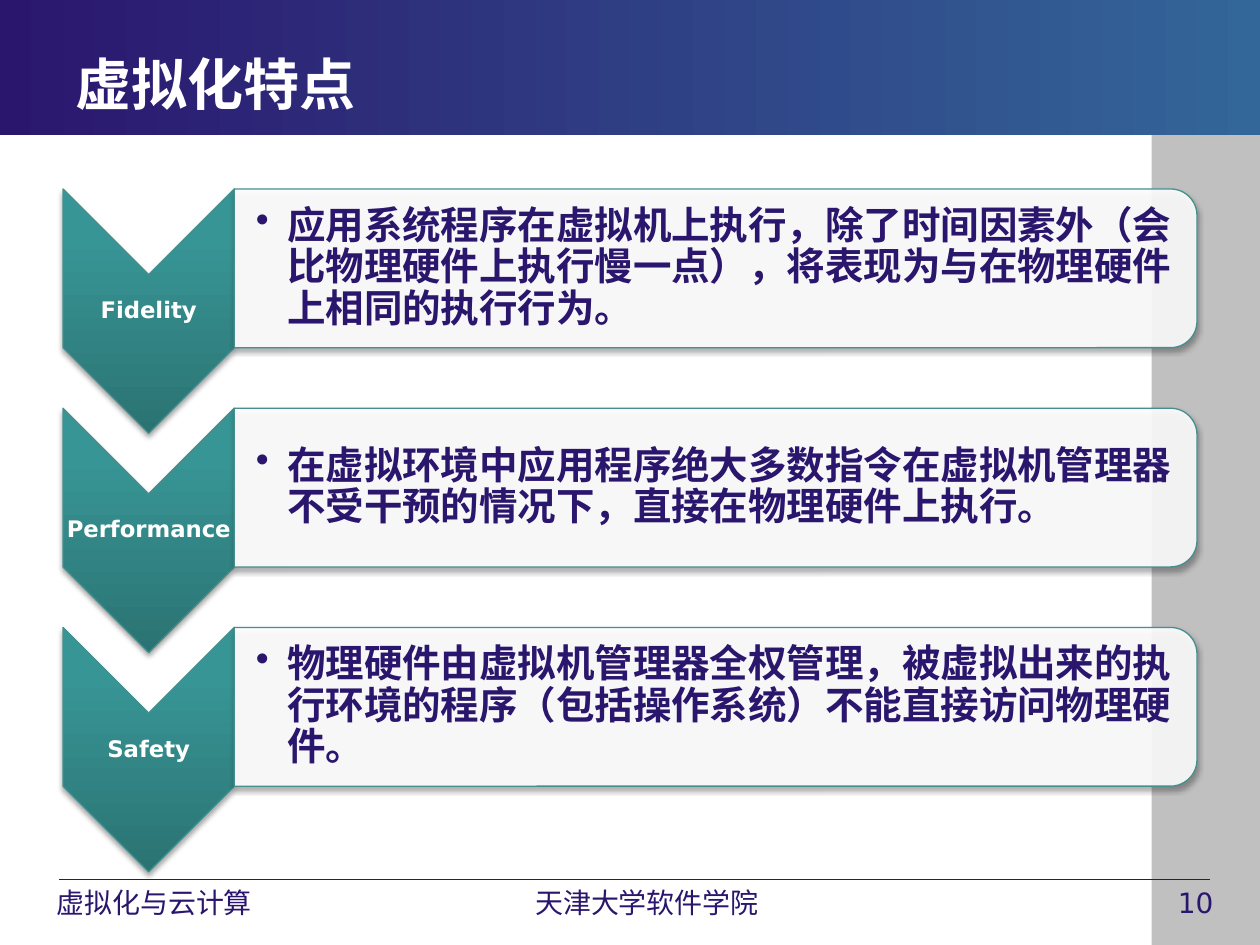
"""Build the slide on the three features of virtualization."""
from copy import deepcopy

from lxml import etree
from pptx import Presentation
from pptx.dml.color import RGBColor
from pptx.enum.shapes import MSO_CONNECTOR, MSO_SHAPE
from pptx.enum.text import MSO_ANCHOR as ANCHOR, PP_ALIGN as ALIGN
from pptx.oxml import parse_xml
from pptx.oxml.ns import nsdecls, qn
from pptx.util import Inches, Pt

NAVY = RGBColor(0x2B, 0x16, 0x6E)
BLUE = RGBColor(0x33, 0x66, 0x99)
GRAY = RGBColor(0xC0, 0xC0, 0xC0)
WHITE = RGBColor(0xFF, 0xFF, 0xFF)
TEAL_DARK = RGBColor(0x2B, 0x73, 0x73)
TEAL = RGBColor(0x38, 0x95, 0x95)
TEAL_LIGHT = RGBColor(0x37, 0x98, 0x98)
TEAL_LINE = RGBColor(0x45, 0x8F, 0x8F)
FONT = "DejaVu Sans"
SHADOW = (
    f'<a:outerShdw {nsdecls("a")} blurRad="{Pt(3.1)}" dist="{Pt(1.8)}" '
    'dir="5400000" rotWithShape="0"><a:srgbClr val="000000">'
    '<a:alpha val="35000"/></a:srgbClr></a:outerShdw>'
)
FEATURES = [
    ("Fidelity", "应用系统程序在虚拟机上执行，除了时间因素外（会比物理硬件上执行慢一点），将表现为与在物理硬件上相同的执行行为。"),
    ("Performance", "在虚拟环境中应用程序绝大多数指令在虚拟机管理器不受干预的情况下，直接在物理硬件上执行。"),
    ("Safety", "物理硬件由虚拟机管理器全权管理，被虚拟出来的执行环境的程序（包括操作系统）不能直接访问物理硬件。"),
]
FOOTERS = [
    (9.25, 0.71, "10", ALIGN.LEFT),
    (0.28, 1.94, "虚拟化与云计算 ", ALIGN.CENTER),
    (4.01, 2.25, "天津大学软件学院", ALIGN.CENTER),
]


def set_gradient(sp, angle, stops):
    sp.fill.gradient()
    sp.fill.gradient_angle = angle
    gs_lst = sp._element.spPr.find(".//" + qn("a:gsLst"))
    while len(gs_lst) < len(stops):
        gs_lst.append(deepcopy(gs_lst[0]))
    for stop, (position, color) in zip(sp.fill.gradient_stops, stops):
        stop.position = position
        stop.color.rgb = color


def write_text(sp, text, size, color, bold, align, anchor, insets=(0.1, 0.05, 0.1, 0.05)):
    tf = sp.text_frame
    tf.text = text
    tf.word_wrap = True
    tf.vertical_anchor = anchor
    tf.margin_left, tf.margin_top, tf.margin_right, tf.margin_bottom = map(Inches, insets)
    p = tf.paragraphs[0]
    p.alignment = align
    font = p.runs[0].font
    font.name, font.size, font.bold = FONT, Pt(size), bold
    font.color.rgb = color
    return p


prs = Presentation()
prs.slide_width, prs.slide_height = Inches(10), Inches(7.5)
s = prs.slides.add_slide(prs.slide_layouts[5])
shapes = s.shapes

side = shapes.add_shape(MSO_SHAPE.RECTANGLE, Inches(9.14), Inches(1.07), Inches(0.86), Inches(6.43))
side.fill.solid()
side.fill.fore_color.rgb = GRAY
rule = shapes.add_connector(MSO_CONNECTOR.STRAIGHT, Inches(0.47), Inches(6.98), Inches(9.6), Inches(6.98))
rule.line.color.rgb = NAVY
rule.line.width = Pt(0.75)
etree.SubElement(rule._element.spPr, qn("a:effectLst"))
header = shapes.add_shape(MSO_SHAPE.RECTANGLE, 0, 0, Inches(10), Inches(1.07))
set_gradient(header, 0, [(0, NAVY), (1, BLUE)])
for sp in (side, header):
    sp.line.fill.background()
    sp.shadow.inherit = False

for left, width, text, align in FOOTERS:
    sp = shapes.add_textbox(Inches(left), Inches(6.98), Inches(width), Inches(0.35))
    write_text(sp, text, 16, NAVY, False, align, ANCHOR.TOP)

title = shapes.title
title.left, title.top, title.width, title.height = map(Inches, (0.5, 0.35, 6.75, 0.62))
write_text(title, "虚拟化特点", 32, WHITE, True, ALIGN.LEFT, ANCHOR.MIDDLE)
shapes._spTree.append(title._element)

for i, (name, description) in enumerate(FEATURES):
    top = 1.79 + 1.74 * i
    chevron = shapes.add_shape(MSO_SHAPE.CHEVRON, Inches(0.21), Inches(top), Inches(1.94), Inches(1.36))
    set_gradient(chevron, 180, [(0, TEAL_DARK), (0.8, TEAL), (1, TEAL_LIGHT)])

    label = shapes.add_textbox(Inches(0.5), Inches(top + 0.39), Inches(1.36), Inches(0.58))
    p = write_text(label, name, 13, WHITE, True, ALIGN.CENTER, ANCHOR.MIDDLE, (0.01,) * 4)
    p.line_spacing = 0.9

    panel = shapes.add_shape(
        MSO_SHAPE.ROUND_2_SAME_RECTANGLE, Inches(5.05), Inches(top - 3.48), Inches(1.26), Inches(7.64))
    panel.fill.solid()
    panel.fill.fore_color.rgb = WHITE
    color = panel._element.spPr.find(".//" + qn("a:srgbClr"))
    etree.SubElement(color, qn("a:alpha"), val="90000")

    for sp in (chevron, panel):
        sp.rotation = 90
        sp.line.color.rgb = TEAL_LINE
        sp.line.width = Pt(0.75)
        sp.shadow.inherit = False
        sp._element.spPr.find(qn("a:effectLst")).append(parse_xml(SHADOW))

    body = shapes.add_textbox(Inches(1.86), Inches(top - 0.23), Inches(7.58), Inches(1.14))
    p = write_text(body, description, 22, NAVY, True, ALIGN.LEFT, ANCHOR.MIDDLE, (0.17, 0.02, 0.02, 0.02))
    p.level = 1
    p.line_spacing = 0.9
    pPr = p._p.get_or_add_pPr()
    pPr.set("marL", str(Inches(0.25)))
    pPr.set("indent", str(Inches(-0.25)))
    etree.SubElement(pPr, qn("a:buChar"), char="•")

prs.save("out.pptx")
